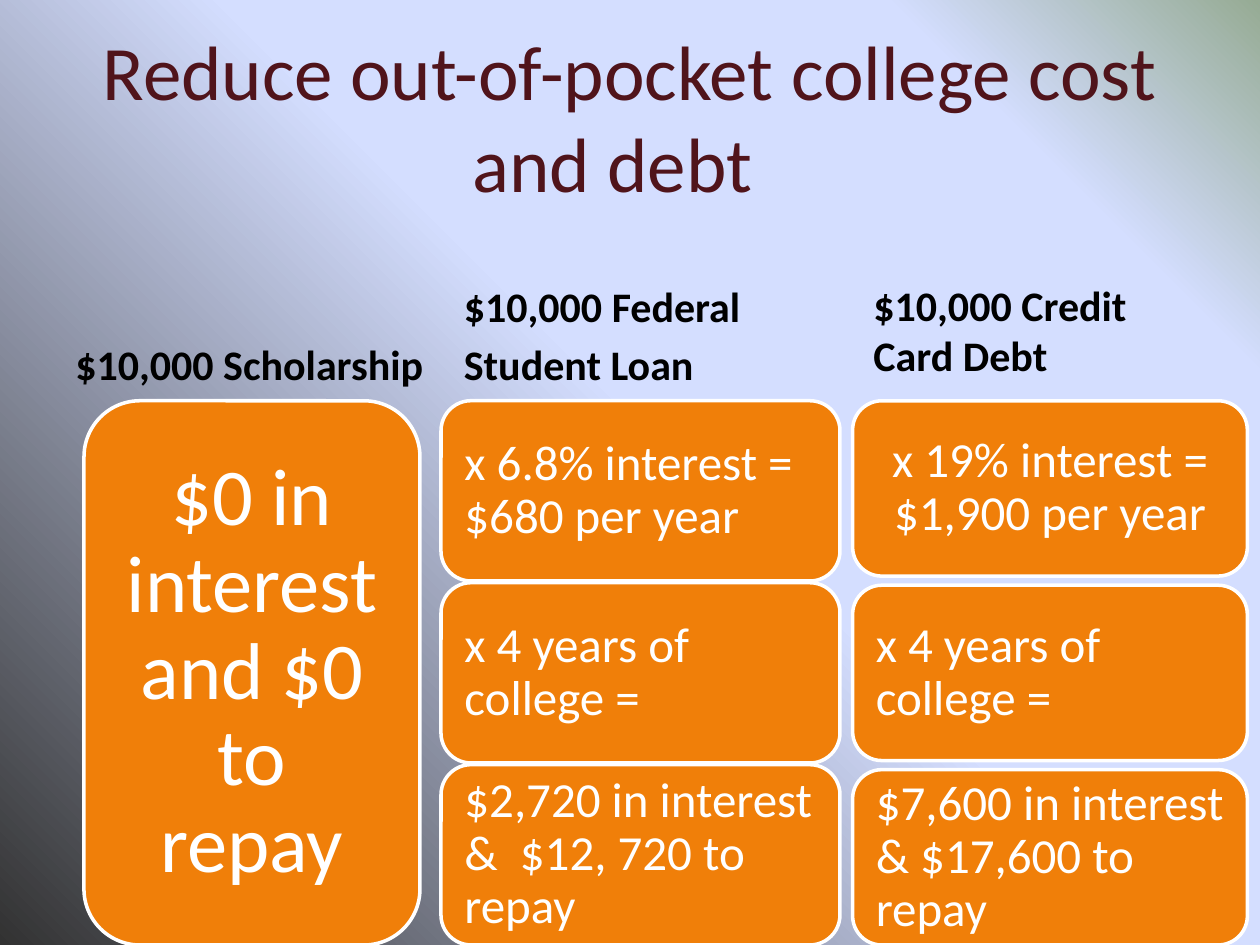
from copy import deepcopy
from pptx import Presentation
from pptx.dml.color import RGBColor
from pptx.enum.shapes import MSO_SHAPE
from pptx.enum.text import MSO_ANCHOR, PP_ALIGN
from pptx.util import Pt

HUES = {
    "box": "F07F09", "edge": "FFFFFF", "head": "000000", "title": "50141B",
    "dark": "323232", "sky": "D4DEFF", "leaf": "96AB94",
}
TOP, END = 229, 540


class Deck:
    """Holds the text style and the current slide."""

    font = "Calibri"

    def __init__(self, wide, high):
        self.prs = Presentation()
        self.prs.slide_width, self.prs.slide_height = Pt(wide), Pt(high)
        self.slide = self.prs.slides.add_slide(self.prs.slide_layouts[6])

    def hue(self, name):
        return RGBColor.from_string(HUES[name])

    def back(self, stops, angle):
        fill = self.slide.background.fill
        fill.gradient()
        fill.gradient_angle = angle
        group = self.slide.element.xpath(".//a:gsLst")[0]
        for _ in range(len(stops) - len(group)):
            group.append(deepcopy(group[0]))
        for stop, (pos, name) in zip(fill.gradient_stops, stops):
            stop.position = pos
            stop.color.rgb = self.hue(name)

    def style(self, frame, lines, size, color, align, anchor, bold=False, gap=0):
        frame.word_wrap = True
        frame.vertical_anchor = anchor
        frame.text = "\n".join(lines)
        for para in frame.paragraphs:
            para.alignment = align
            para.space_before = Pt(gap)
            para.font.name, para.font.size = self.font, Pt(size)
            para.font.bold = bold
            para.font.color.rgb = self.hue(color)

    def text(self, area, lines, size, color, **look):
        box = self.slide.shapes.add_textbox(*map(Pt, area))
        self.style(box.text_frame, lines, size, color, **look)

    def card(self, area, words, size, align, inset):
        card = self.slide.shapes.add_shape(MSO_SHAPE.ROUNDED_RECTANGLE, *map(Pt, area))
        card.shadow.inherit = False
        card.fill.solid()
        card.fill.fore_color.rgb = self.hue("box")
        card.line.color.rgb = self.hue("edge")
        card.line.width = Pt(2)
        frame = card.text_frame
        frame.margin_left = frame.margin_right = Pt(inset[0])
        frame.margin_top = frame.margin_bottom = Pt(inset[1])
        self.style(frame, [words], size, "edge", align, MSO_ANCHOR.MIDDLE)
        frame.paragraphs[0].line_spacing = 0.9

    def stack(self, left, wide, high, cards, size, inset):
        step = (END - TOP - high) / max(len(cards) - 1, 1)
        for row, (words, align) in enumerate(cards):
            self.card((left, TOP + row * step, wide, high), words, size, align, inset)


def main():
    mid, left = PP_ALIGN.CENTER, PP_ALIGN.LEFT
    deck = Deck(720, 540)
    deck.back([(0, "dark"), (0.53, "sky"), (0.83, "sky"), (1, "leaf")], 45)

    heads = [
        ((36, 126, 216, 100), ["$10,000 Scholarship"], MSO_ANCHOR.BOTTOM, 4.8),
        ((258, 138, 222, 88), ["$10,000 Federal", "Student Loan"], MSO_ANCHOR.BOTTOM, 4.8),
        ((492, 156, 207, 65.5), ["$10,000 Credit", "Card Debt"], MSO_ANCHOR.TOP, 0),
    ]
    for area, lines, anchor, gap in heads:
        deck.text(area, lines, 24, "head", align=left, anchor=anchor, bold=True, gap=gap)

    years = ("x 4 years of college =", left)
    deck.stack(48, 192, 311, [("$0 in interest and $0 to repay", mid)], 46, (13.8, 7))
    deck.stack(252, 228, 103, [
        ("x 6.8% interest = $680 per year", left),
        years,
        ("$2,720 in interest &  $12, 720 to repay", left),
    ], 28, (8.4, 8.4))
    deck.stack(487.2, 225.6, 100.2, [
        ("x 19% interest = $1,900 per year", mid),
        years,
        ("$7,600 in interest & $17,600 to repay", left),
    ], 28, (8.4, 4.2))

    deck.text((36, 9, 648, 114), ["Reduce out-of-pocket college cost and debt  "], 44,
              "title", align=mid, anchor=MSO_ANCHOR.MIDDLE)
    deck.prs.save("out.pptx")


if __name__ == "__main__":
    main()
